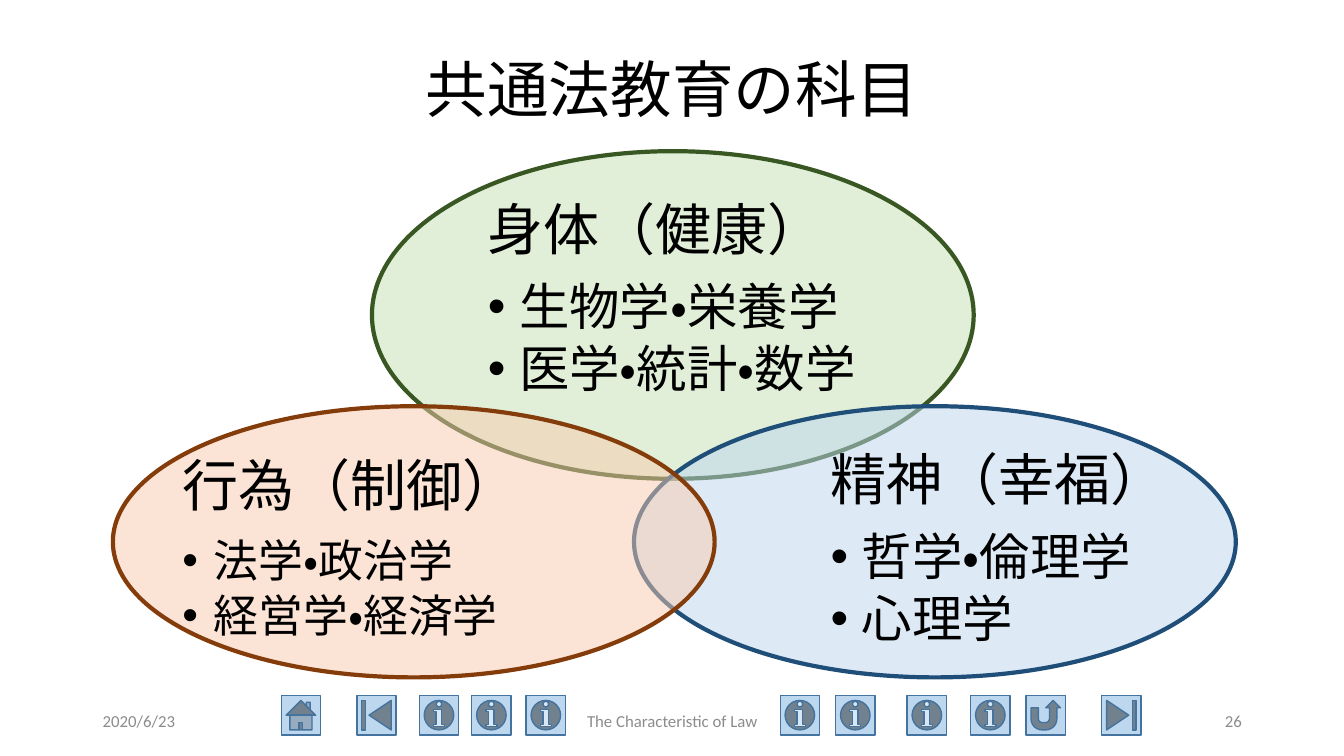
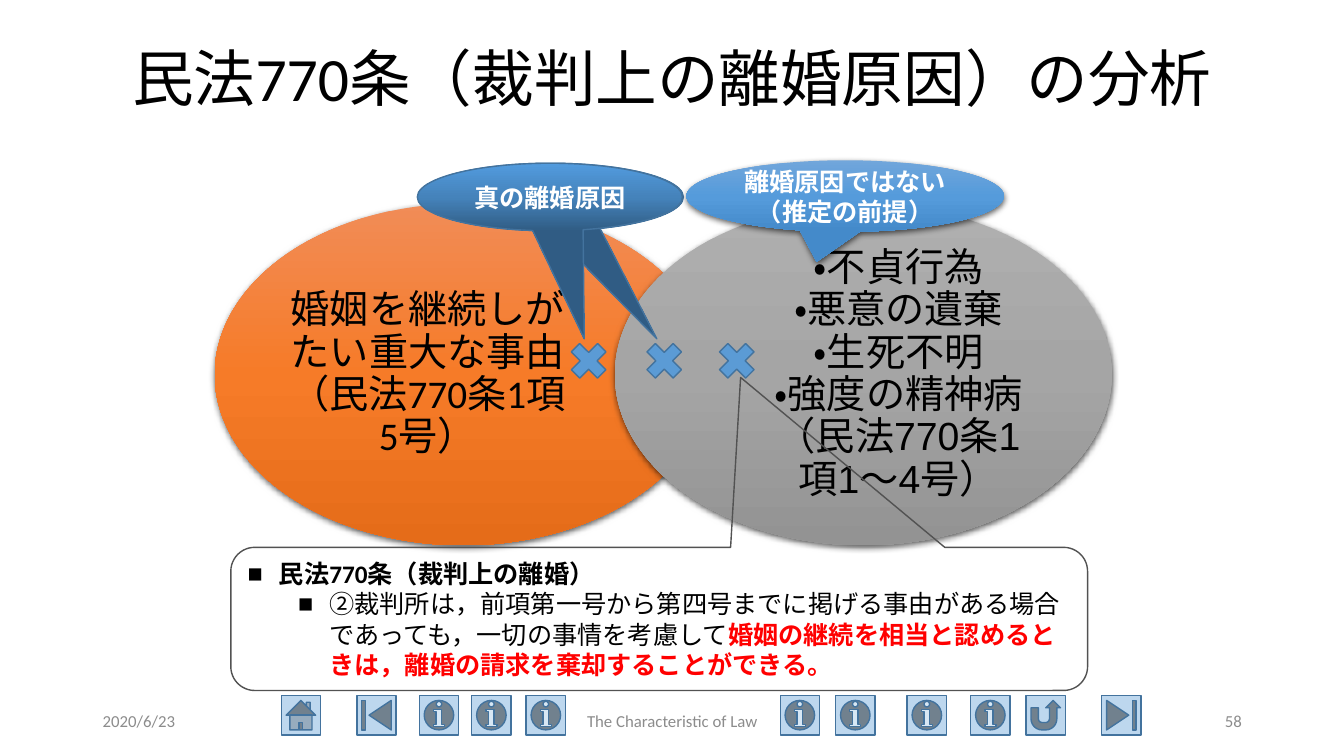
"""Build two slides on common law education and the analysis of divorce grounds."""
import lxml.etree
import pptx
import pptx.dml.color
import pptx.enum.lang
import pptx.enum.shapes
import pptx.enum.text
import pptx.oxml.ns
import pptx.util

SHAPES = pptx.enum.shapes.MSO_SHAPE
ALIGN = pptx.enum.text.PP_ALIGN
JAPANESE = pptx.enum.lang.MSO_LANGUAGE_ID.JAPANESE
Inches = pptx.util.Inches
Pt = pptx.util.Pt
qn = pptx.oxml.ns.qn

BLACK, WHITE, RED, GREY = "000000", "FFFFFF", "FF0000", "8C8C8C"
BUTTON_FILL, BUTTON_LINE, MARK_FILL = "BDD7EE", "43739E", "5B9BD5"
BUTTON_SIZE, BUTTON_TOP = 0.39, 6.9
INDENT = 0.31
BUTTONS = [
    (SHAPES.ACTION_BUTTON_HOME, [2.79]),
    (SHAPES.ACTION_BUTTON_BEGINNING, [3.54]),
    (SHAPES.ACTION_BUTTON_INFORMATION, [4.16, 4.68, 5.22, 7.74, 8.29, 9, 9.63]),
    (SHAPES.ACTION_BUTTON_RETURN, [10.18]),
    (SHAPES.ACTION_BUTTON_END, [10.93]),
]
DATE, FOOTER = "2020/6/23", "The Characteristic of Law"

SUBJECTS = [
    {"heading": "身体（健康）", "items": ["生物学・栄養学", "医学・統計・数学"], "size": 36,
     "oval": (3.69, 1.5, 5.97, 3.25), "text": (4.84, 2.25, 4.38, 1.46),
     "fill": "C5E0B4", "line": "385723"},
    {"heading": "精神（幸福）", "items": ["哲学・倫理学", "心理学"], "size": 36,
     "oval": (6.29, 4.03, 5.97, 2.69), "text": (8.24, 4.72, 3.58, 1.48),
     "fill": "BDD7EE", "line": "1F4E79"},
    {"heading": "行為（制御）", "items": ["法学・政治学", "経営学・経済学"], "size": 32,
     "oval": (1.12, 4.03, 5.97, 2.69), "text": (1.81, 4.72, 3.58, 1.48),
     "fill": "F8CBAD", "line": "843C0B"},
]

GROUNDS = [
    {"text": "婚姻を継続しがたい重大な事由\v（民法770条1項5号）", "font": "Calibri",
     "left": 2.13, "margins": (0, 0, 0.7, 0), "fill": ["F18C57", "F67B28", "E56C19"]},
    {"text": "・不貞行為\v・悪意の遺棄\v・生死不明\v・強度の精神病\v（民法770条1項1～4号）",
     "font": "Arial", "left": 6.1, "margins": (0.7, 0, 0, 0),
     "fill": ["AFAFAF", "A5A5A5", "939393"]},
]
MARKS = [5.59, 6.34, 7.06]
TRUE_GROUND = "真の離婚原因"
TRUE_GROUND_TAILS = [(4.15, 0.4), (4.14, 0.13)]
TRUE_GROUND_FILL = ["529BDE", "4583BB", "305C84"]
NOT_GROUND = ["離婚原因ではない", "（推定の前提）"]
NOT_GROUND_FILL = ["71A6DB", "559BDB", "448ACA"]
ARTICLE = "民法770条（裁判上の離婚）"
CLAUSE = "②裁判所は，前項第一号から第四号までに掲げる事由がある場合であっても，一切の事情を考慮して"
CLAUSE_KEY = "婚姻の継続を相当と認めるときは，離婚の請求を棄却することができる。"


def color(value):
    """Turn a hex string into a colour."""
    return pptx.dml.color.RGBColor.from_string(value)


def add_xml(parent, tag, **attributes):
    """Append one drawing element."""
    return lxml.etree.SubElement(parent, qn(tag), attributes)


def format_runs(para, size, tone=BLACK, bold=False, font="Calibri"):
    """Give all runs of a paragraph one look."""
    for run in para.runs:
        run.font.size = Pt(size)
        run.font.name = font
        run.font.bold = bold
        run.font.color.rgb = color(tone)
        run.font.language_id = JAPANESE


def layout_para(para, align=ALIGN.LEFT, spacing=None, after=None, bullet=None, left=INDENT):
    """Set alignment, spacing in shares of a line, and a hanging bullet."""
    para.alignment = align
    if spacing:
        para.line_spacing = spacing
    properties = para._p.get_or_add_pPr()
    if after:
        add_xml(add_xml(properties, "a:spcAft"), "a:spcPct", val=str(round(after * 100000)))
    if bullet:
        properties.set("marL", str(Inches(left)))
        properties.set("indent", str(Inches(-INDENT)))
        add_xml(properties, "a:buFont", typeface="Arial")
        add_xml(properties, "a:buChar", char=bullet)


def set_frame(frame, margins=None):
    """Wrap the text, centre it vertically and set its margins."""
    frame.word_wrap = True
    frame.vertical_anchor = pptx.enum.text.MSO_ANCHOR.MIDDLE
    if margins:
        (frame.margin_left, frame.margin_top,
         frame.margin_right, frame.margin_bottom) = map(Inches, margins)


def add_text(page, place, lines, margins=None):
    """Add a text box with one paragraph a line."""
    frame = page.shapes.add_textbox(*map(Inches, place)).text_frame
    set_frame(frame, margins)
    frame.text = "\n".join(lines)
    return frame


def add_figure(page, kind, place, fill=None, line=None, width=1, adjustments=(), shadow=False):
    """Add a preset shape; a list of colours as fill runs from top to bottom."""
    shape = page.shapes.add_shape(kind, *map(Inches, place))
    for index, value in enumerate(adjustments):
        shape.adjustments[index] = value
    if isinstance(fill, list):
        shape.fill.gradient()
        shape.fill.gradient_angle = 270
        stops = shape._element.spPr.find(".//" + qn("a:gsLst"))
        for stop in list(stops):
            stops.remove(stop)
        for index, tone in enumerate(fill):
            stop = add_xml(stops, "a:gs", pos=str(index * 100000 // (len(fill) - 1)))
            add_xml(stop, "a:srgbClr", val=tone)
    elif fill:
        shape.fill.solid()
        shape.fill.fore_color.rgb = color(fill)
    else:
        shape.fill.background()
    if line:
        shape.line.color.rgb = color(line)
        shape.line.width = Pt(width)
    else:
        shape.line.fill.background()
    shape.shadow.inherit = False
    if shadow:
        effects = shape._element.spPr.find(qn("a:effectLst"))
        outer = add_xml(effects, "a:outerShdw", blurRad=str(Pt(4.5)), dist=str(Pt(1.5)),
                        dir="5400000", algn="ctr", rotWithShape="0")
        add_xml(add_xml(outer, "a:srgbClr", val=BLACK), "a:alpha", val="63000")
    set_frame(shape.text_frame)
    return shape


def add_page(deck, title, title_height, number):
    """Add a slide with its title, navigation buttons and footer."""
    page = deck.slides.add_slide(deck.slide_layouts[5])
    for kind, lefts in BUTTONS:
        for left in lefts:
            add_figure(page, kind, (left, BUTTON_TOP, BUTTON_SIZE, BUTTON_SIZE),
                       BUTTON_FILL, BUTTON_LINE)
    box = page.shapes.title
    box.left, box.top, box.width, box.height = map(Inches, (0.92, 0.4, 11.5, title_height))
    set_frame(box.text_frame)
    box.text_frame.text = title
    layout_para(box.text_frame.paragraphs[0], ALIGN.CENTER, 0.9)
    format_runs(box.text_frame.paragraphs[0], 44)
    for text, left, width, align in [(DATE, 0.92, 3, ALIGN.LEFT),
                                     (FOOTER, 4.42, 4.5, ALIGN.CENTER),
                                     (str(number), 9.42, 3, ALIGN.RIGHT)]:
        para = add_text(page, (left, 6.95, width, 0.4), [text]).paragraphs[0]
        layout_para(para, align)
        format_runs(para, 12, GREY)
    return page


def build_subjects(deck):
    """Draw three overlapping fields of study."""
    page = add_page(deck, "共通法教育の科目", 1.04, 26)
    for subject in SUBJECTS:
        oval = add_figure(page, SHAPES.OVAL, subject["oval"], subject["fill"], subject["line"], 3)
        tone = oval._element.spPr.find(qn("a:solidFill")).find(qn("a:srgbClr"))
        add_xml(tone, "a:alpha", val="50000")
        frame = add_text(page, subject["text"], [subject["heading"], *subject["items"]], (0,) * 4)
        heading, *items = frame.paragraphs
        layout_para(heading, spacing=0.9, after=0.35)
        format_runs(heading, 40)
        for para in items:
            layout_para(para, spacing=0.9, after=0.15, bullet="•")
            format_runs(para, subject["size"])


def add_balloon(page, place, lines, fill, tail, line=None, shadow=False):
    """Add an oval callout with bold white text."""
    balloon = add_figure(page, SHAPES.OVAL_CALLOUT, place, fill, line,
                         adjustments=tail, shadow=shadow)
    balloon.text_frame.text = "\n".join(lines)
    for para in balloon.text_frame.paragraphs:
        layout_para(para, ALIGN.CENTER)
        format_runs(para, 18, WHITE, True)


def build_grounds(deck):
    """Draw the two sets of divorce grounds with their callouts."""
    page = add_page(deck, "民法770条（裁判上の離婚原因）の分析", 0.81, 58)
    for ground in GROUNDS:
        oval = add_figure(page, SHAPES.OVAL, (ground["left"], 2.02, 4.93, 3.39),
                          ground["fill"], shadow=True)
        set_frame(oval.text_frame, ground["margins"])
        para = oval.text_frame.paragraphs[0]
        para.text = ground["text"]
        layout_para(para, ALIGN.CENTER, 0.9)
        format_runs(para, 28, font=ground["font"])
    for left in MARKS:
        add_figure(page, SHAPES.MATH_MULTIPLY, (left, 3.33, 0.5, 0.5), MARK_FILL, BUTTON_LINE)

    callout = add_figure(page, SHAPES.ROUNDED_RECTANGULAR_CALLOUT, (2.29, 5.43, 8.5, 1.42),
                         line="525252", adjustments=(0.095, -1.687, 0.167))
    callout.text_frame.text = ARTICLE + "\n" + CLAUSE
    article, clause = callout.text_frame.paragraphs
    layout_para(article, bullet="■")
    format_runs(article, 18, bold=True)
    layout_para(clause, bullet="■", left=INDENT + 0.5)
    clause.add_run().text = CLAUSE_KEY
    format_runs(clause, 18)
    key = clause.runs[-1].font
    key.bold = True
    key.color.rgb = color(RED)

    for left, tail in TRUE_GROUND_TAILS:
        add_balloon(page, (left, 1.62, 2.63, 0.67), [TRUE_GROUND], TRUE_GROUND_FILL,
                    (tail, 2.1), BUTTON_LINE)
    add_balloon(page, (6.81, 1.59, 3.15, 0.71), NOT_GROUND, NOT_GROUND_FILL,
                (-0.09, 0.92), shadow=True)


def main():
    """Build and save the deck."""
    deck = pptx.Presentation()
    deck.slide_width, deck.slide_height = Inches(40 / 3), Inches(7.5)
    build_subjects(deck)
    build_grounds(deck)
    deck.save("out.pptx")


if __name__ == "__main__":
    main()
